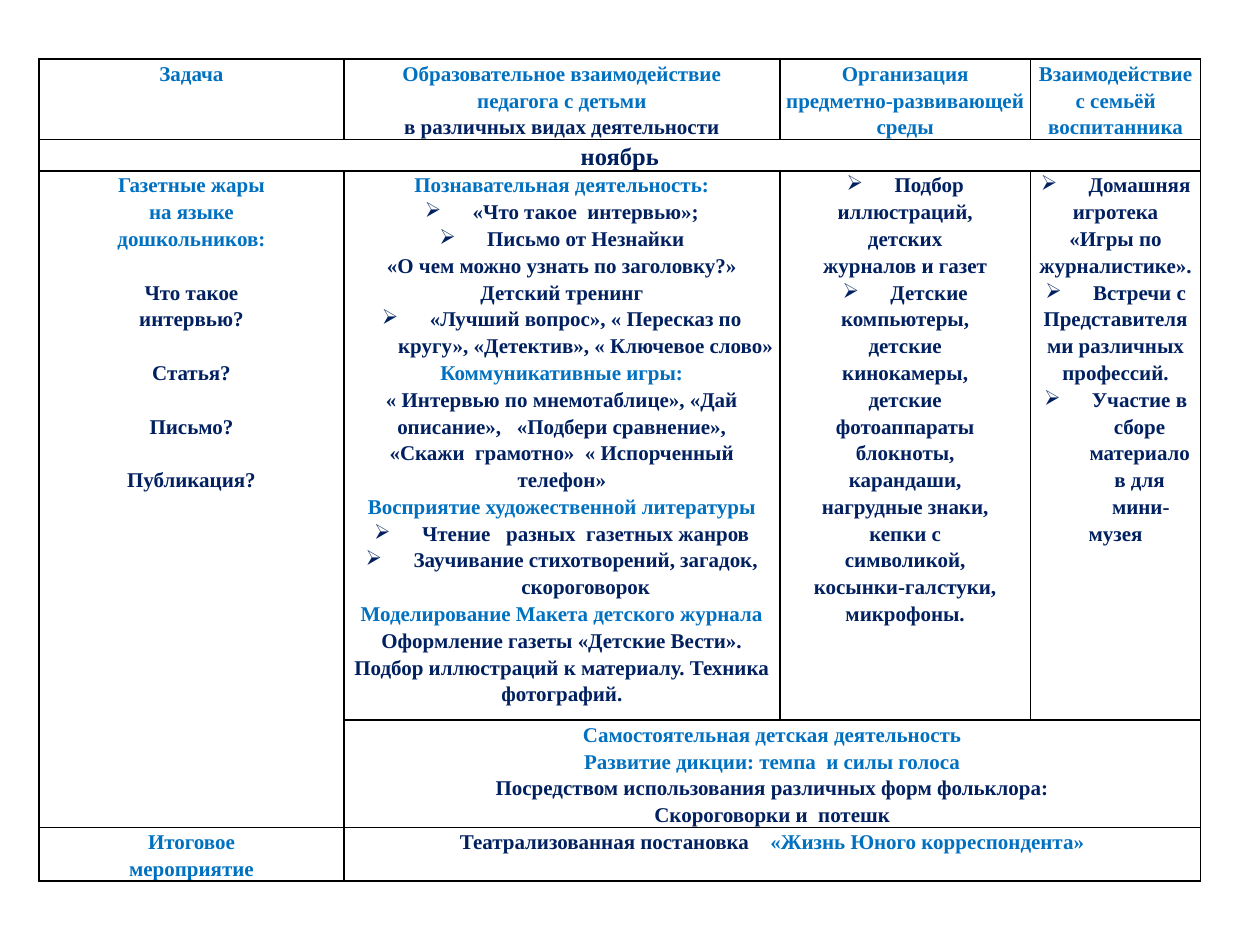
from dataclasses import dataclass, replace

from lxml.etree import SubElement
from pptx import Presentation
from pptx.dml.color import RGBColor
from pptx.enum.text import PP_ALIGN
from pptx.oxml.ns import qn
from pptx.util import Inches, Pt

FONT = "Times New Roman"
BLUE, NAVY, BLACK = "0070C0", "002060", "000000"
BLANK_LINE = 15.3
HANGING = 0.38
COLUMN_WIDTHS = (2.42, 3.46, 1.99, 1.35)
ROW_HEIGHTS = (0.54, 0.18, 4.36, 0.73, 0.36)


@dataclass(frozen=True)
class Line:
    text: str
    color: str = NAVY
    size: int = 12
    bullet: bool = False
    before: float = 0
    indent: float = 0
    blue_tail: str = ""


@dataclass(frozen=True)
class Entry:
    row: int
    column: int
    lines: list[Line]
    row_span: int = 1
    column_span: int = 1


def blue(*texts: str) -> list[Line]:
    return [Line(text, BLUE) for text in texts]


def navy(*texts: str) -> list[Line]:
    return [Line(text) for text in texts]


def bullets(*texts: str) -> list[Line]:
    return [Line(text, bullet=True) for text in texts]


def after_gap(*texts: str) -> list[Line]:
    return [replace(line, before=BLANK_LINE) for line in navy(*texts)]


HEADINGS = [
    Entry(0, 0, blue("Задача")),
    Entry(0, 1, blue("Образовательное взаимодействие", "педагога с детьми")
          + navy("в различных видах деятельности")),
    Entry(0, 2, blue("Организация предметно-развивающей среды")),
    Entry(0, 3, blue("Взаимодействие с семьёй воспитанника")),
]
MONTH = Entry(1, 0, [Line("ноябрь", size=14)], column_span=4)
TASK = Entry(
    2, 0,
    blue("Газетные жары", "на языке", "дошкольников:")
    + after_gap("Что такое") + navy("интервью?")
    + after_gap("Статья?", "Письмо?", "Публикация?"),
    row_span=2,
)
TEACHING = Entry(
    2, 1,
    blue("Познавательная деятельность:")
    + bullets("«Что такое  интервью»;", "Письмо от Незнайки")
    + navy("«О чем можно узнать по заголовку?»", "Детский тренинг")
    + bullets("«Лучший вопрос», « Пересказ по кругу», «Детектив», « Ключевое слово»")
    + blue("Коммуникативные игры:")
    + navy("« Интервью по мнемотаблице», «Дай",
           "описание»,   «Подбери сравнение»,",
           "«Скажи  грамотно»  « Испорченный телефон»")
    + blue("Восприятие художественной литературы")
    + bullets("Чтение   разных  газетных жанров",
              "Заучивание стихотворений, загадок, скороговорок")
    + blue("Моделирование Макета детского журнала")
    + navy("Оформление газеты «Детские Вести».",
           "Подбор иллюстраций к материалу. Техника фотографий."),
)
ENVIRONMENT = Entry(
    2, 2,
    bullets("Подбор")
    + navy("иллюстраций,", "детских", "журналов и газет")
    + bullets("Детские")
    + navy("компьютеры,", "детские", "кинокамеры,", "детские", "фотоаппараты",
           "блокноты,", "карандаши,", "нагрудные знаки,", "кепки с",
           "символикой,", "косынки-галстуки,", "микрофоны."),
)
FAMILY = Entry(
    2, 3,
    bullets("Домашняя")
    + navy("игротека", "«Игры по", "журналистике».")
    + bullets("Встречи с")
    + navy("Представителями различных", "профессий.")
    + bullets("Участие в сборе материалов для")
    + [Line("мини-музея", indent=0.4)],
)
INDEPENDENT = Entry(
    3, 1,
    blue("Самостоятельная детская деятельность", "Развитие дикции: темпа  и силы голоса")
    + navy("Посредством использования различных форм фольклора:",
           "Скороговорки и  потешк"),
    column_span=3,
)
FINAL = [
    Entry(4, 0, blue("Итоговое", "мероприятие")),
    Entry(4, 1, [Line("Театрализованная постановка    ",
                      blue_tail="«Жизнь Юного корреспондента»")], column_span=3),
]
ENTRIES = [*HEADINGS, MONTH, TASK, TEACHING, ENVIRONMENT, FAMILY, INDEPENDENT, *FINAL]


def rgb(color: str) -> RGBColor:
    return RGBColor.from_string(color)


def format_cell(cell) -> None:
    """Set the margins, clear the fill and rule all four sides."""
    cell.margin_left = cell.margin_right = Inches(0.05)
    cell.margin_top = cell.margin_bottom = 0
    properties = cell._tc.get_or_add_tcPr()
    for side in ("a:lnL", "a:lnR", "a:lnT", "a:lnB"):
        border = SubElement(properties, qn(side), w=str(Pt(1)))
        solid = SubElement(border, qn("a:solidFill"))
        SubElement(solid, qn("a:srgbClr"), val=BLACK)
    cell.fill.background()


def set_indent(paragraph, margin: float, first_line: float) -> None:
    properties = paragraph._p.get_or_add_pPr()
    properties.set("marL", str(Inches(margin)))
    properties.set("indent", str(Inches(first_line)))


def write_line(paragraph, line: Line) -> None:
    paragraph.text = line.text
    paragraph.alignment = PP_ALIGN.CENTER
    paragraph.line_spacing = 1.15
    paragraph.space_before = Pt(line.before)
    if line.bullet:
        set_indent(paragraph, HANGING, -HANGING)
        SubElement(paragraph._p.get_or_add_pPr(), qn("a:buChar"), char="➢")
    elif line.indent:
        set_indent(paragraph, 0, line.indent)
    if line.blue_tail:
        paragraph.add_run().text = line.blue_tail
    for run, color in zip(paragraph.runs, (line.color, BLUE)):
        run.font.name = FONT
        run.font.size = Pt(line.size)
        run.font.bold = True
        run.font.color.rgb = rgb(color)


def write_entry(table, entry: Entry) -> None:
    cell = table.cell(entry.row, entry.column)
    if entry.row_span > 1 or entry.column_span > 1:
        cell.merge(table.cell(entry.row + entry.row_span - 1,
                              entry.column + entry.column_span - 1))
    frame = cell.text_frame
    for number, line in enumerate(entry.lines):
        write_line(frame.add_paragraph() if number else frame.paragraphs[0], line)


def main() -> None:
    deck = Presentation()
    deck.slide_width, deck.slide_height = Inches(10), Inches(7.5)
    slide = deck.slides.add_slide(deck.slide_layouts[6])
    plan = slide.shapes.add_table(
        len(ROW_HEIGHTS), len(COLUMN_WIDTHS), Inches(0.31), Inches(0.47),
        Inches(sum(COLUMN_WIDTHS)), Inches(sum(ROW_HEIGHTS))).table
    plan.first_row = plan.horz_banding = False
    for column, width in zip(plan.columns, COLUMN_WIDTHS):
        column.width = Inches(width)
    for row, height in zip(plan.rows, ROW_HEIGHTS):
        row.height = Inches(height)
    for cell in plan.iter_cells():
        format_cell(cell)
    for entry in ENTRIES:
        write_entry(plan, entry)
    deck.save("out.pptx")


if __name__ == "__main__":
    main()
